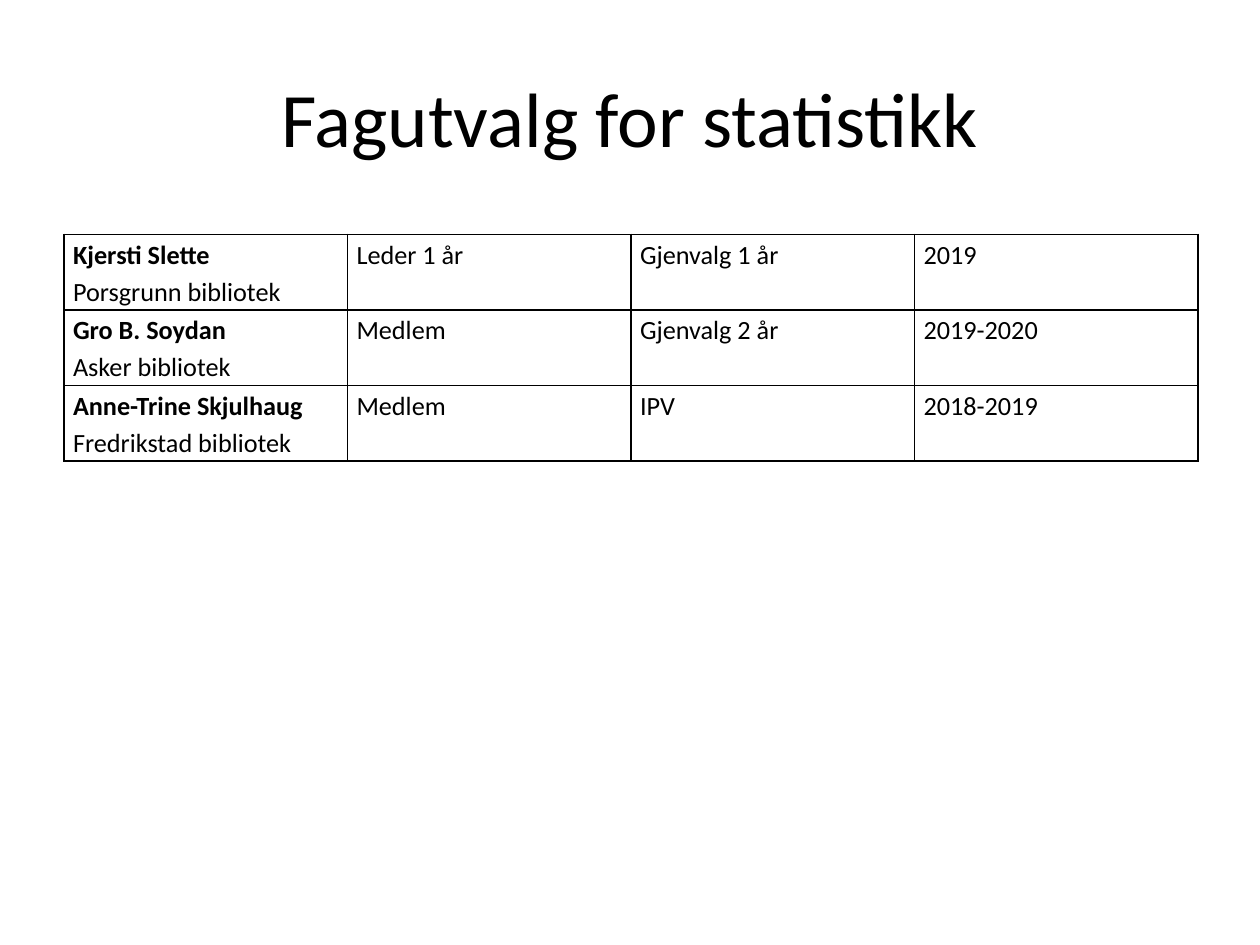
import pptx
import pptx.dml.color
import pptx.enum.text
import pptx.oxml
import pptx.oxml.ns
import pptx.util
from pptx.util import Inches

MEMBERS = [
    ("Kjersti Slette", "Porsgrunn bibliotek", "Leder 1 år", "Gjenvalg 1 år", "2019"),
    ("Gro B. Soydan", "Asker bibliotek", "Medlem", "Gjenvalg 2 år", "2019-2020"),
    ("Anne-Trine Skjulhaug", "Fredrikstad bibliotek", "Medlem", "IPV", "2018-2019"),
]


def color(hex_value):
    return pptx.dml.color.RGBColor.from_string(hex_value)


class CommitteeSlide:
    FONT = "Calibri"
    INK = "000000"
    BORDER_POINTS = 1
    CELL_FORMAT = {
        "margin_left": Inches(0.07),
        "margin_right": Inches(0.07),
        "margin_top": 0,
        "margin_bottom": 0,
        "vertical_anchor": pptx.enum.text.MSO_ANCHOR.TOP,
    }

    def __init__(self, presentation):
        # Title Only layout
        self.slide = presentation.slides.add_slide(presentation.slide_layouts[5])

    def add_text(self, paragraph, text, size, bold=False):
        run = paragraph.add_run()
        run.text = text
        font_format = {"name": self.FONT, "size": pptx.util.Pt(size), "bold": bold}
        for name, value in font_format.items():
            setattr(run.font, name, value)
        run.font.color.rgb = color(self.INK)

    def title(self, text, left, top, width, height):
        heading = self.slide.shapes.title
        place = {"left": left, "top": top, "width": width, "height": height}
        for name, value in place.items():
            setattr(heading, name, Inches(value))
        heading.text_frame.vertical_anchor = pptx.enum.text.MSO_ANCHOR.MIDDLE
        line = heading.text_frame.paragraphs[0]
        line.alignment = pptx.enum.text.PP_ALIGN.CENTER
        self.add_text(line, text, 44)

    def borders(self, cell):
        properties = cell._tc.get_or_add_tcPr()
        width = pptx.util.Pt(self.BORDER_POINTS)
        for side in ("lnL", "lnR", "lnT", "lnB"):
            properties.append(pptx.oxml.parse_xml(
                f'<a:{side} {pptx.oxml.ns.nsdecls("a")} w="{width}"><a:solidFill>'
                f'<a:srgbClr val="{self.INK}"/></a:solidFill></a:{side}>'))

    def cell(self, cell, lines, bold_first=False):
        self.borders(cell)
        cell.fill.background()
        for name, value in self.CELL_FORMAT.items():
            setattr(cell, name, value)
        paragraph = cell.text_frame.paragraphs[0]
        paragraph.line_spacing = 1.15
        for index, text in enumerate(lines):
            if index:
                paragraph.add_line_break()
            self.add_text(paragraph, text, 15, bold_first and index == 0)

    def table(self, members, left, top, width, row_height):
        frame = self.slide.shapes.add_table(
            len(members), 4, Inches(left), Inches(top),
            Inches(width), Inches(row_height * len(members)))
        grid = frame.table
        grid.first_row = grid.horz_banding = False
        for row, (person, library, *details) in enumerate(members):
            self.cell(grid.cell(row, 0), [person, library], bold_first=True)
            for column, detail in enumerate(details, start=1):
                self.cell(grid.cell(row, column), [detail])


def main():
    presentation = pptx.Presentation()
    presentation.slide_width = Inches(10)
    presentation.slide_height = Inches(7.5)

    committee = CommitteeSlide(presentation)
    # Heading
    committee.title("Fagutvalg for statistikk", 0.5, 0.3, 9, 1.25)
    # Members with role, election and term
    committee.table(MEMBERS, 0.51, 1.86, 9, 0.6)

    presentation.save("out.pptx")


if __name__ == "__main__":
    main()
